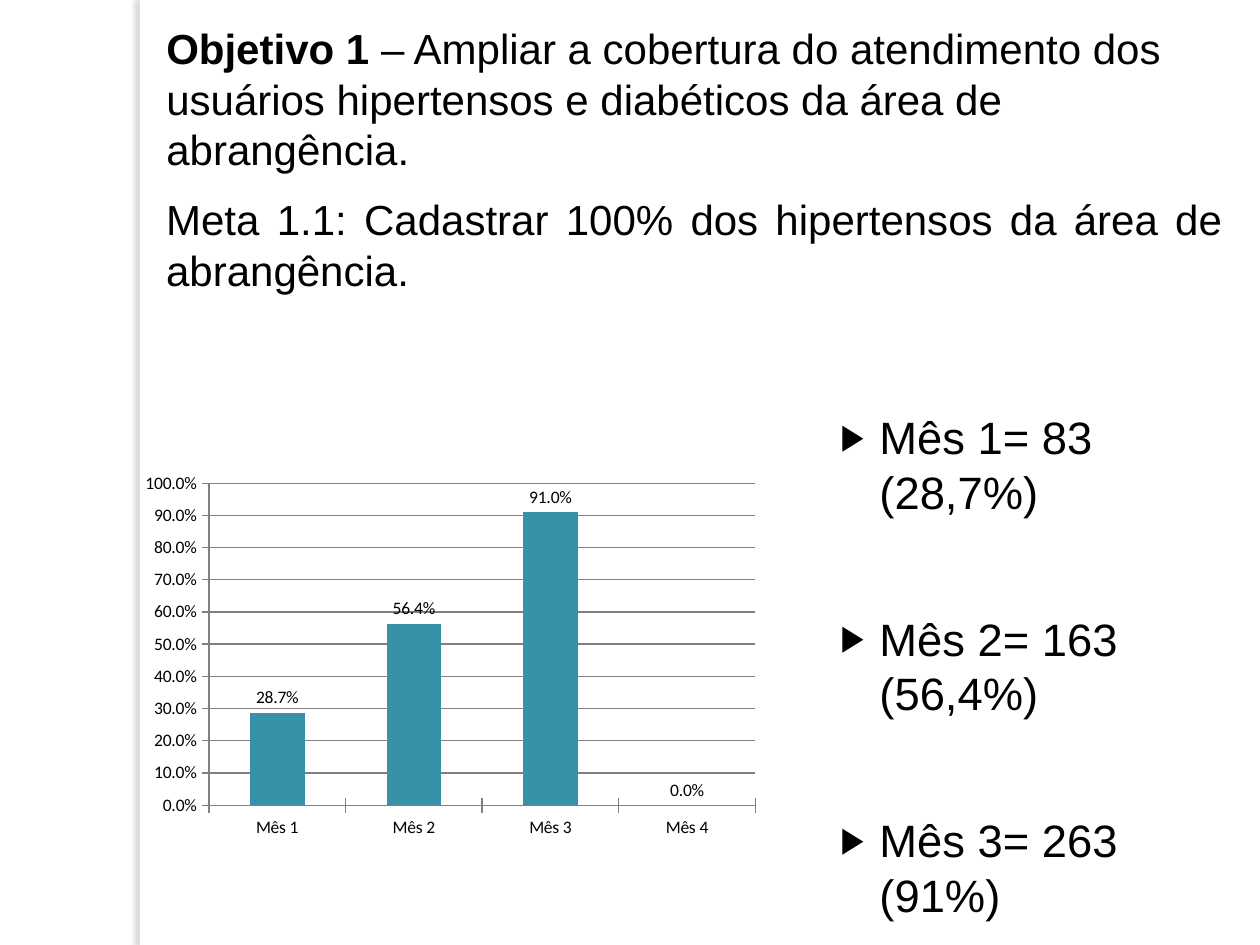
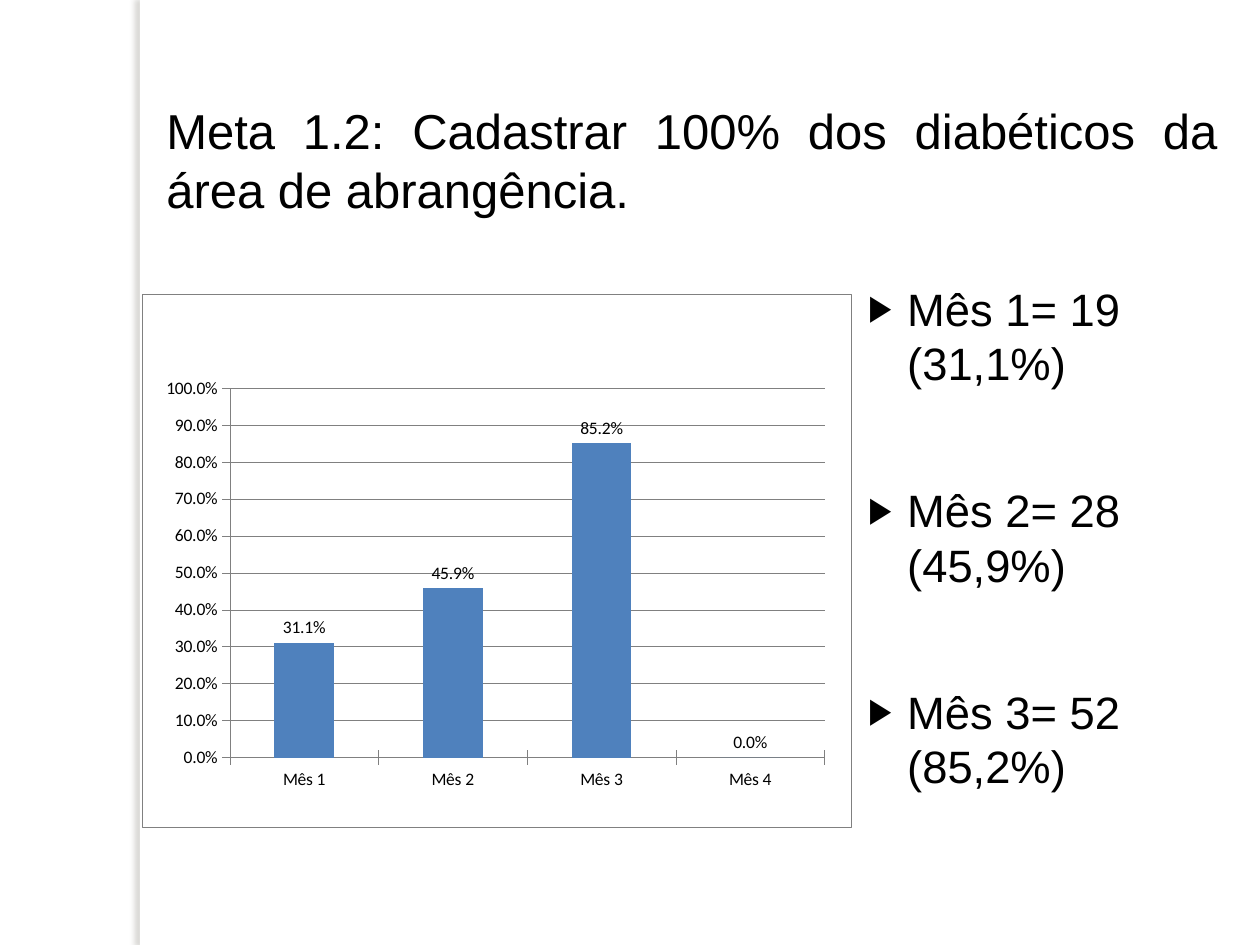
from dataclasses import dataclass

import lxml.etree
import pptx
import pptx.chart.data
import pptx.dml.color
import pptx.enum.chart
import pptx.enum.shapes
import pptx.enum.text
import pptx.oxml
import pptx.oxml.ns
import pptx.util

COLOURS = {
    "paper": "FFFFFF",
    "ink": "000000",
    "shade": "736F63",
    "grid": "808080",
    "teal": "3891A7",
    "blue": "4F81BD",
}
TEXT_FONT = "Arial"
CHART_FONT = "Calibri"
LIST_SIZE = 25.9
LINE_HEIGHT = 1.2
MONTHS = ["Mês 1", "Mês 2", "Mês 3", "Mês 4"]
PERCENT_FORMAT = "0.0%"
SLIDE_WIDTH = pptx.util.Inches(10)
SLIDE_HEIGHT = pptx.util.Inches(7.5)
LEFT = pptx.enum.text.PP_ALIGN.LEFT
JUSTIFY = pptx.enum.text.PP_ALIGN.JUSTIFY


@dataclass(frozen=True)
class Area:
    """Left, top, width and height as percentages of the surrounding frame."""
    left: float
    top: float
    width: float
    height: float

    def lengths(self) -> dict:
        return {
            "left": round(SLIDE_WIDTH * self.left / 100),
            "top": round(SLIDE_HEIGHT * self.top / 100),
            "width": round(SLIDE_WIDTH * self.width / 100),
            "height": round(SLIDE_HEIGHT * self.height / 100),
        }


@dataclass(frozen=True)
class Span:
    text: str
    bold: bool = False


@dataclass(frozen=True)
class Heading:
    area: Area
    spans: tuple
    size: float
    alignment: object = JUSTIFY


@dataclass(frozen=True)
class MonthList:
    area: Area
    items: tuple
    top_inset: float = 0.05


@dataclass(frozen=True)
class CoverageChart:
    area: Area
    plot: Area
    values: tuple
    bar_colour: str
    line_width: float
    framed: bool = False


@dataclass(frozen=True)
class GoalPage:
    title: Heading
    months: MonthList
    chart: CoverageChart
    subheading: Heading | None = None


PAGES = [
    GoalPage(
        title=Heading(
            Area(12.2, 1.73, 85.8, 17.47),
            (
                Span("Objetivo 1", bold=True),
                Span(" – Ampliar a cobertura do atendimento dos usuários "
                     "hipertensos e diabéticos da área de abrangência."),
            ),
            24,
            LEFT,
        ),
        subheading=Heading(
            Area(12.2, 19.87, 85.8, 17.47),
            (Span("Meta 1.1: Cadastrar 100% dos hipertensos da área de abrangência."),),
            24,
        ),
        months=MonthList(
            Area(65.7, 34.53, 32.3, 55.6),
            ("Mês 1= 83 (28,7%)", "Mês 2= 163 (56,4%)", "Mês 3= 263 (91%)"),
            top_inset=0.66,
        ),
        chart=CoverageChart(
            Area(10.6, 34.53, 51.2, 57.47), Area(11.7, 28.9, 84.7, 59.3),
            (0.287, 0.564, 0.91, 0), "teal", 0.75,
        ),
    ),
    GoalPage(
        title=Heading(
            Area(12.2, 10, 85.4, 13.87),
            (Span("Meta 1.2: Cadastrar 100% dos diabéticos da área de abrangência."),),
            28,
        ),
        months=MonthList(
            Area(67.9, 29.07, 29.7, 55.6),
            ("Mês 1= 19 (31,1%)", "Mês 2= 28 (45,9%)", "Mês 3= 52 (85,2%)"),
        ),
        chart=CoverageChart(
            Area(11.3, 31.07, 56.3, 56.53), Area(12.3, 17.7, 83.9, 69.2),
            (0.311, 0.459, 0.852, 0), "blue", 0.25, framed=True,
        ),
    ),
]


def colour(name: str) -> pptx.dml.color.RGBColor:
    return pptx.dml.color.RGBColor.from_string(COLOURS[name])


def set_values(target, values: dict) -> None:
    for name, value in values.items():
        setattr(target, name, value)


def add_xml(parent, tag: str, **attributes):
    child = lxml.etree.SubElement(parent, pptx.oxml.ns.qn(tag))
    for name, value in attributes.items():
        child.set(name, str(value))
    return child


def prepare_frame(box, area: Area, top_inset: float = 0.05):
    set_values(box, area.lengths())
    frame = box.text_frame
    set_values(frame, {
        "word_wrap": True,
        "auto_size": pptx.enum.text.MSO_AUTO_SIZE.NONE,
        "vertical_anchor": pptx.enum.text.MSO_ANCHOR.TOP,
        "margin_left": pptx.util.Inches(0.1),
        "margin_right": pptx.util.Inches(0.1),
        "margin_top": pptx.util.Inches(top_inset),
        "margin_bottom": pptx.util.Inches(0.05),
    })
    return frame


def write_para(para, spans: tuple, size: float, alignment=LEFT) -> None:
    set_values(para, {
        "alignment": alignment,
        "line_spacing": pptx.util.Pt(size * LINE_HEIGHT),
    })
    for span in spans:
        run = para.add_run()
        run.text = span.text
        set_values(run.font, {
            "name": TEXT_FONT, "size": pptx.util.Pt(size), "bold": span.bold,
        })
        run.font.color.rgb = colour("ink")


def fill_heading(box, heading: Heading) -> None:
    frame = prepare_frame(box, heading.area)
    write_para(frame.paragraphs[0], heading.spans, heading.size, heading.alignment)


def add_bullet(para) -> None:
    indent = pptx.util.Inches(0.31)
    properties = para._p.get_or_add_pPr()
    properties.set("marL", str(indent))
    properties.set("indent", str(-indent))
    bullet_colour = add_xml(properties, "a:buClr")
    add_xml(bullet_colour, "a:srgbClr", val=COLOURS["ink"])
    add_xml(properties, "a:buSzPct", val=80000)
    add_xml(properties, "a:buChar", char="▶")


def fill_months(box, months: MonthList) -> None:
    frame = prepare_frame(box, months.area, months.top_inset)
    for index, item in enumerate(months.items):
        para = frame.add_paragraph() if index else frame.paragraphs[0]
        write_para(para, (Span(item),), LIST_SIZE)
        set_values(para, {
            "space_before": pptx.util.Pt(47 if index else 0),
            "space_after": pptx.util.Pt(6),
        })
        add_bullet(para)


def place_plot(plot_area, area: Area) -> None:
    """Fix the inner plot rectangle within the chart."""
    for old_layout in plot_area.findall(pptx.oxml.ns.qn("c:layout")):
        plot_area.remove(old_layout)
    layout = add_xml(plot_area, "c:layout")
    plot_area.insert(0, layout)
    manual = add_xml(layout, "c:manualLayout")
    add_xml(manual, "c:layoutTarget", val="inner")
    add_xml(manual, "c:xMode", val="edge")
    add_xml(manual, "c:yMode", val="edge")
    for key, share in zip("xywh", (area.left, area.top, area.width, area.height)):
        add_xml(manual, f"c:{key}", val=round(share / 100, 3))


def add_fill(parent, name: str):
    properties = add_xml(parent, "c:spPr")
    add_xml(add_xml(properties, "a:solidFill"), "a:srgbClr", val=COLOURS[name])
    return properties


def frame_chart(chart, plot_area, line_width: float) -> None:
    add_fill(plot_area, "paper")
    properties = add_fill(chart.element, "paper")
    border = add_xml(properties, "a:ln", w=pptx.util.Pt(line_width))
    add_xml(add_xml(border, "a:solidFill"), "a:srgbClr", val=COLOURS["grid"])
    chart.element.find(pptx.oxml.ns.qn("c:chart")).addnext(properties)


def style_line(line, width: float) -> None:
    line.color.rgb = colour("grid")
    line.width = pptx.util.Pt(width)


def style_chart_font(font) -> None:
    set_values(font, {"name": CHART_FONT, "size": pptx.util.Pt(10), "bold": False})
    font.color.rgb = colour("ink")


def draw_chart(page, model: CoverageChart) -> None:
    data = pptx.chart.data.CategoryChartData(number_format=PERCENT_FORMAT)
    data.categories = MONTHS
    data.add_series("Series 1", model.values)
    chart = page.shapes.add_chart(
        pptx.enum.chart.XL_CHART_TYPE.COLUMN_CLUSTERED,
        *model.area.lengths().values(), data,
    ).chart
    set_values(chart, {"has_legend": False, "has_title": False})
    style_chart_font(chart.font)

    set_values(chart.value_axis, {
        "minimum_scale": 0, "maximum_scale": 1, "major_unit": 0.1,
        "has_major_gridlines": True,
    })
    set_values(chart.value_axis.tick_labels, {
        "number_format": PERCENT_FORMAT, "number_format_is_linked": False,
    })
    for axis in (chart.category_axis, chart.value_axis):
        axis.major_tick_mark = pptx.enum.chart.XL_TICK_MARK.CROSS
        style_line(axis.format.line, model.line_width)
        style_chart_font(axis.tick_labels.font)
    style_line(chart.value_axis.major_gridlines.format.line, model.line_width)

    plot = chart.plots[0]
    set_values(plot, {"gap_width": 150, "vary_by_categories": False,
                      "has_data_labels": True})
    set_values(plot.data_labels, {
        "show_value": True, "number_format": PERCENT_FORMAT,
        "number_format_is_linked": False,
        "position": pptx.enum.chart.XL_LABEL_POSITION.OUTSIDE_END,
    })
    style_chart_font(plot.data_labels.font)
    bars = plot.series[0].format.fill
    bars.solid()
    bars.fore_color.rgb = colour(model.bar_colour)

    plot_area = chart.element.find(".//" + pptx.oxml.ns.qn("c:plotArea"))
    place_plot(plot_area, model.plot)
    if model.framed:
        frame_chart(chart, plot_area, model.line_width)


def add_side_band(page) -> None:
    """Draw the shadowed band and move it to the layout that all pages share."""
    band = page.shapes.add_shape(
        pptx.enum.shapes.MSO_SHAPE.RECTANGLE, *Area(11.1, 0, 0.8, 100).lengths().values()
    )
    band.fill.solid()
    band.fill.fore_color.rgb = colour("paper")
    band.line.fill.background()
    band.shadow.inherit = False
    effects = band.element.spPr.find(pptx.oxml.ns.qn("a:effectLst"))
    shadow = add_xml(effects, "a:outerShdw", blurRad=pptx.util.Pt(3),
                     dist=pptx.util.Pt(3), dir=180 * 60000, algn="tl", rotWithShape=0)
    add_xml(add_xml(shadow, "a:srgbClr", val=COLOURS["shade"]), "a:alpha", val=25000)
    band.element.nvSpPr.cNvPr.set("id", "99")
    page.slide_layout.shapes.element.insert(2, band.element)


def build_page(page, model: GoalPage) -> None:
    fill_heading(page.shapes.title, model.title)
    if model.subheading:
        box = page.shapes.add_textbox(*model.subheading.area.lengths().values())
        fill_heading(box, model.subheading)
    fill_months(page.placeholders[1], model.months)
    draw_chart(page, model.chart)


def main() -> None:
    deck = pptx.Presentation()
    set_values(deck, {"slide_width": SLIDE_WIDTH, "slide_height": SLIDE_HEIGHT})
    layout = deck.slide_layouts[1]
    for index, model in enumerate(PAGES):
        page = deck.slides.add_slide(layout)
        if index == 0:
            add_side_band(page)
        build_page(page, model)
    deck.save("out.pptx")


if __name__ == "__main__":
    main()
